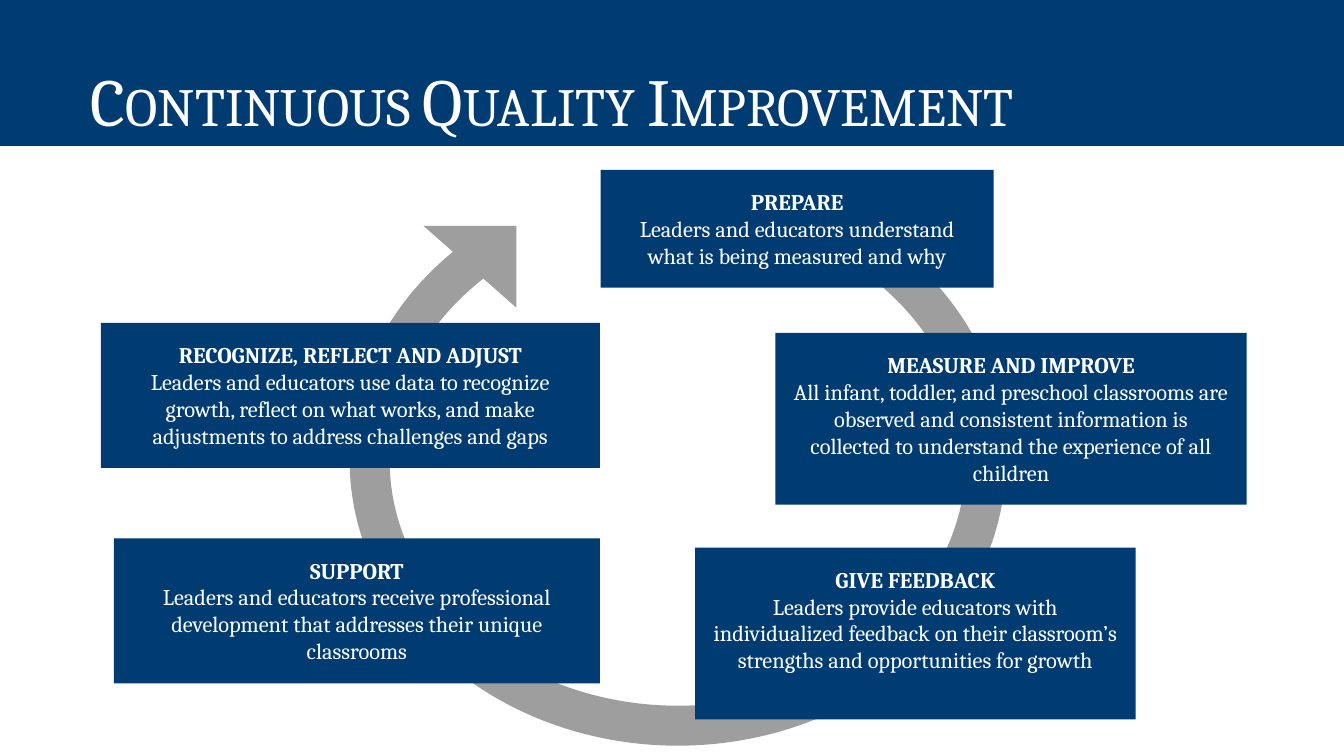
from typing import NamedTuple

from pptx import Presentation
from pptx import util as u
from pptx.dml.color import RGBColor
from pptx.enum import shapes, text

NAVY, GREY, WHITE = "003C71", "9E9E9E", "FFFFFF"
FONT = "Cambria"
SLIDE_W, SLIDE_H = 33.87, 19.05
PADDING = 0.46


class Box(NamedTuple):
    left: float
    top: float
    width: float
    height: float


class Step(NamedTuple):
    heading: str
    detail: str
    box: Box


STEPS = [
    Step("PREPARE",
         "Leaders and educators understand what is being measured and why",
         Box(15.14, 4.28, 9.9, 2.97)),
    Step("SUPPORT",
         "Leaders and educators receive professional development that "
         "addresses their unique classrooms",
         Box(2.87, 13.57, 12.25, 3.65)),
    Step("GIVE FEEDBACK",
         "Leaders provide educators with individualized feedback on their "
         "classroom’s strengths and opportunities for growth",
         Box(17.52, 13.8, 11.1, 4.33)),
    Step("RECOGNIZE, REFLECT AND ADJUST",
         "Leaders and educators use data to recognize growth, reflect on what "
         "works, and make adjustments to address challenges and gaps",
         Box(2.54, 8.14, 12.58, 3.65)),
    Step("MEASURE AND IMPROVE",
         "All infant, toddler, and preschool classrooms are observed and "
         "consistent information is collected to understand the experience "
         "of all children",
         Box(19.54, 8.39, 11.88, 4.33)),
]


def rgb(color: str) -> RGBColor:
    return RGBColor.from_string(color)


def add_shape(s, kind, box: Box, color: str, rotation: float = 0):
    """Add a flat, unoutlined preset shape; lengths are in centimetres."""
    sp = s.shapes.add_shape(kind, *(u.Cm(v) for v in box))
    sp.shadow.inherit = False
    sp.fill.solid()
    sp.fill.fore_color.rgb = rgb(color)
    sp.line.fill.background()
    sp.rotation = rotation
    return sp


def set_frame(tf, anchor, left: float, top: float, right: float, bottom: float) -> None:
    tf.word_wrap = True
    tf.vertical_anchor = anchor
    tf.margin_left, tf.margin_top = u.Cm(left), u.Cm(top)
    tf.margin_right, tf.margin_bottom = u.Cm(right), u.Cm(bottom)


def write(p, words: str, *, size: float = 16, bold: bool = False,
          small_caps: bool = False, align=text.PP_ALIGN.CENTER,
          spacing: float = 1.0) -> None:
    p.alignment = align
    p.line_spacing = spacing
    r = p.add_run()
    r.text = words
    r.font.name = FONT
    r.font.size = u.Pt(size)
    r.font.bold = bold
    r.font.color.rgb = rgb(WHITE)
    if small_caps:
        r.font._element.set("cap", "small")


def draw_title(s) -> None:
    sp = add_shape(s, shapes.MSO_SHAPE.RECTANGLE, Box(0, 0, SLIDE_W, 3.68), NAVY)
    set_frame(sp.text_frame, text.MSO_ANCHOR.BOTTOM, 2.29, 0.13, 0.25, 0.13)
    write(sp.text_frame.paragraphs[0], "Continuous Quality Improvement", size=48,
          small_caps=True, align=text.PP_ALIGN.LEFT, spacing=0.9)


def draw_cycle_arrow(s) -> None:
    ring = add_shape(s, shapes.MSO_SHAPE.BLOCK_ARC,
                     Box(8.81, 4.39, 16.54, 14.4), GREY, rotation=180)
    # Start angle, end angle (60000ths of a degree / 100000), thickness
    for i, value in enumerate((54, 30.13, 0.07)):
        ring.adjustments[i] = value
    add_shape(s, shapes.MSO_SHAPE.RIGHT_TRIANGLE,
              Box(10.67, 5.69, 2.34, 2.06), GREY, rotation=180)


def draw_step(s, step: Step) -> None:
    sp = add_shape(s, shapes.MSO_SHAPE.RECTANGLE, step.box, NAVY)
    tf = sp.text_frame
    set_frame(tf, text.MSO_ANCHOR.TOP, *[PADDING] * 4)
    write(tf.paragraphs[0], step.heading, bold=True)
    write(tf.add_paragraph(), step.detail)


def main() -> None:
    prs = Presentation()
    prs.slide_width, prs.slide_height = u.Cm(SLIDE_W), u.Cm(SLIDE_H)
    s = prs.slides.add_slide(prs.slide_layouts[6])
    draw_title(s)
    draw_cycle_arrow(s)
    for step in STEPS:
        draw_step(s, step)
    prs.save("out.pptx")


if __name__ == "__main__":
    main()
